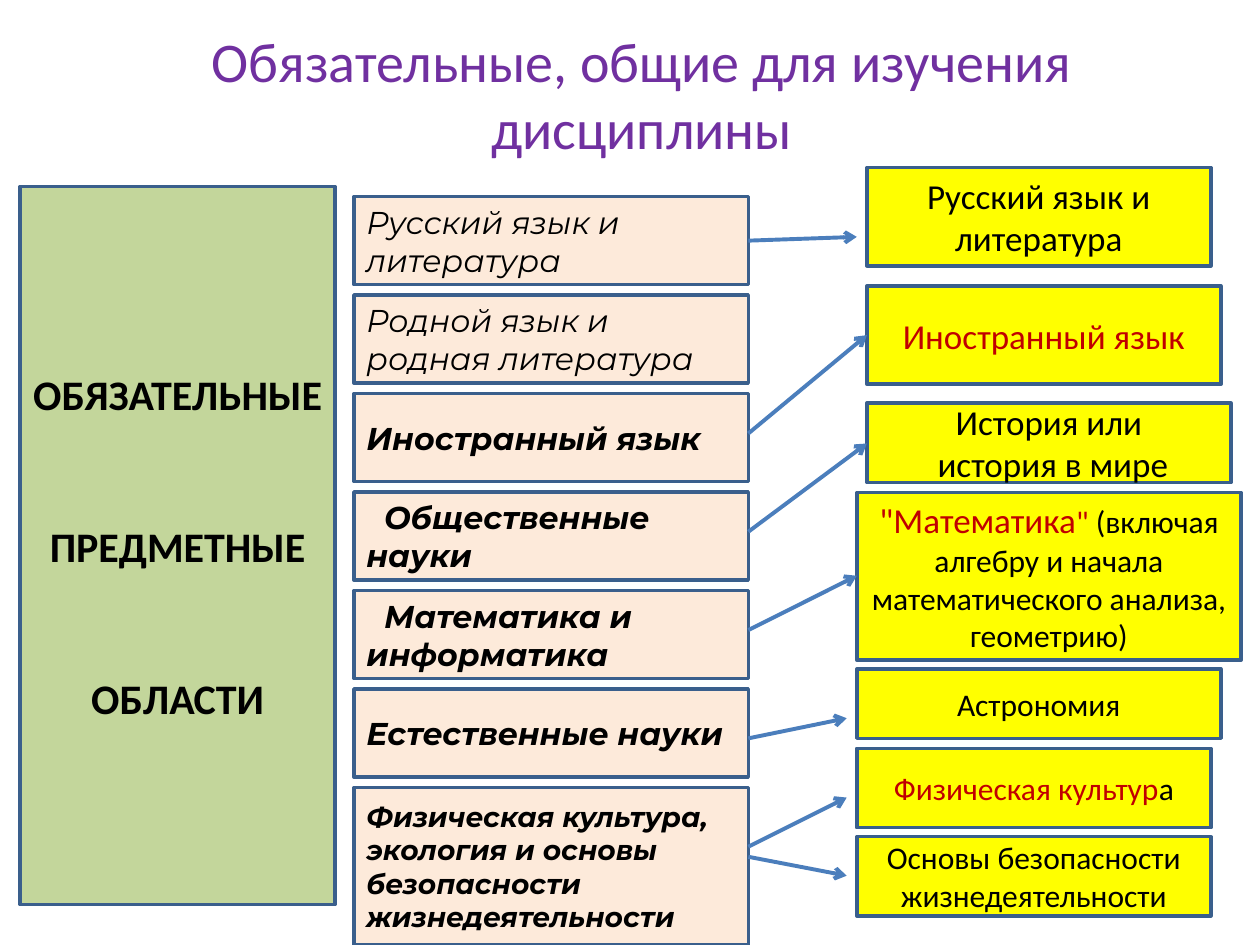
import dataclasses

import pptx
import pptx.dml.color
import pptx.enum.shapes
import pptx.enum.text
import pptx.oxml.ns
import pptx.util
from lxml import etree
from pptx.util import Inches


@dataclasses.dataclass(frozen=True)
class Theme:
    """Hold the colours, fonts and type sizes of the slide."""
    title: str = "7030A0"
    green: str = "C3D69B"
    peach: str = "FDEADA"
    yellow: str = "FFFF00"
    border: str = "3A5F8C"
    arrow: str = "4B7EBC"
    black: str = "000000"
    red: str = "C00000"
    body_font: str = "Calibri"
    area_font: str = "Montserrat"
    title_size: int = 32
    heading_size: int = 24
    large: int = 20
    medium: int = 18
    small: int = 16


THEME = Theme()
AREA_LEFT, AREA_WIDTH, AREA_TOP, LAST_AREA_TOP = 2.81, 3.13, 1.56, 6.25
HEADING = ("ОБЯЗАТЕЛЬНЫЕ", "ПРЕДМЕТНЫЕ", "ОБЛАСТИ")

# Text, bold, first-line indent
AREAS = [
    ("Русский язык и литература", False, 0),
    ("Родной язык и\vродная литература", False, 0),
    ("Иностранный язык", True, 0),
    ("Общественные науки", True, 0.14),
    ("Математика и информатика", True, 0.14),
    ("Естественные науки", True, 0),
    ("Физическая культура, экология и основы безопасности жизнедеятельности", True, 0),
]

# Place, then paragraphs made of (text, size, colour) spans
SUBJECTS = [
    ((6.88, 1.33, 2.73, 0.78), [[("Русский язык и литература", THEME.large, THEME.black)]]),
    ((6.88, 2.27, 2.81, 0.78), [[("Иностранный язык", THEME.large, THEME.red)]]),
    ((6.88, 3.2, 2.89, 0.63), [[("История или", THEME.large, THEME.black)],
                               [(" история в мире", THEME.large, THEME.black)]]),
    ((6.8, 3.91, 3.05, 1.33), [[
        ('"Математика', THEME.large, THEME.red),
        ('" ', THEME.medium, THEME.red),
        ("(включая алгебру и начала математического анализа, геометрию)",
         THEME.medium, THEME.black)]]),
    ((6.8, 5.31, 2.89, 0.55), [[("Астрономия", THEME.medium, THEME.black)]]),
    ((6.8, 5.94, 2.81, 0.63), [[("Физическая культур", THEME.medium, THEME.red),
                                ("а", THEME.medium, THEME.black)]]),
    ((6.8, 6.64, 2.81, 0.63), [[("Основы безопасности жизнедеятельности",
                                 THEME.medium, THEME.black)]]),
]

# Start height, end point
ARROWS = [
    (1.91, 6.8, 1.88),
    (3.44, 6.88, 2.66),
    (4.22, 6.88, 3.52),
    (5, 6.8, 4.57),
    (5.86, 6.72, 5.7),
    (6.72, 6.72, 6.33),
    (6.8, 6.72, 6.95),
]


def rgb(value):
    """Return a colour object for a hexadecimal value."""
    return pptx.dml.color.RGBColor.from_string(value)


def style(font, name, size, colour, bold=False, italic=False):
    """Set every font property used on the slide."""
    font.name, font.size = name, pptx.util.Pt(size)
    font.bold, font.italic = bold, italic
    font.color.rgb = rgb(colour)


def prepare(frame):
    """Wrap the text and centre it vertically."""
    frame.word_wrap = True
    frame.vertical_anchor = pptx.enum.text.MSO_ANCHOR.MIDDLE
    return frame


def add_box(page, place, fill):
    """Add a bordered rectangle and return its text frame."""
    box = page.shapes.add_shape(
        pptx.enum.shapes.MSO_SHAPE.RECTANGLE, *map(Inches, place))
    box.shadow.inherit = False
    box.fill.solid()
    box.fill.fore_color.rgb = rgb(fill)
    box.line.color.rgb = rgb(THEME.border)
    box.line.width = pptx.util.Pt(2)
    return prepare(box.text_frame)


def add_title(page):
    """Add the centred slide title."""
    box = page.shapes.add_textbox(*map(Inches, (0.5, 0.23, 9.19, 1.02)))
    para = prepare(box.text_frame).paragraphs[0]
    para.text = "Обязательные, общие для изучения дисциплины"
    para.alignment = pptx.enum.text.PP_ALIGN.CENTER
    style(para.font, THEME.body_font, THEME.title_size, THEME.title)


def add_heading(page):
    """Add the tall green box with its widely spaced words."""
    frame = add_box(page, (0.16, 1.48, 2.5, 5.7), THEME.green)
    frame.text = "\n".join(HEADING)
    for index, para in enumerate(frame.paragraphs):
        para.alignment = pptx.enum.text.PP_ALIGN.CENTER
        para.space_before = pptx.util.Pt(58 if index else 0)
        style(para.font, THEME.body_font, THEME.heading_size, THEME.black, bold=True)


def add_areas(page):
    """Add the evenly spaced column of subject areas."""
    last = len(AREAS) - 1
    pitch = (LAST_AREA_TOP - AREA_TOP) / last
    for index, (text, bold, indent) in enumerate(AREAS):
        height, size = (1.25, THEME.small) if index == last else (0.7, THEME.medium)
        place = (AREA_LEFT, AREA_TOP + index * pitch, AREA_WIDTH, height)
        para = add_box(page, place, THEME.peach).paragraphs[0]
        para.text = text
        para.alignment = pptx.enum.text.PP_ALIGN.LEFT
        style(para.font, THEME.area_font, size, THEME.black, bold, italic=True)
        para._p.get_or_add_pPr().set("indent", str(Inches(indent)))


def add_subject(page, place, paragraphs):
    """Add a yellow subject box with its coloured spans."""
    frame = add_box(page, place, THEME.yellow)
    for index, spans in enumerate(paragraphs):
        para = frame.add_paragraph() if index else frame.paragraphs[0]
        para.alignment = pptx.enum.text.PP_ALIGN.CENTER
        for text, size, colour in spans:
            span = para.add_run()
            span.text = text
            style(span.font, THEME.body_font, size, colour)


def add_arrow(page, start_y, end_x, end_y):
    """Add an arrow from the column of areas to a subject."""
    start_x = AREA_LEFT + AREA_WIDTH
    arrow = page.shapes.add_connector(
        pptx.enum.shapes.MSO_CONNECTOR.STRAIGHT,
        *map(Inches, (start_x, start_y, end_x, end_y)))
    arrow.line.color.rgb = rgb(THEME.arrow)
    arrow.line.width = pptx.util.Pt(2.25)
    qn = pptx.oxml.ns.qn
    etree.SubElement(arrow.line._get_or_add_ln(), qn("a:tailEnd"), type="arrow")
    etree.SubElement(arrow._element.spPr, qn("a:effectLst"))


def main():
    """Build and save the slide."""
    deck = pptx.Presentation()
    deck.slide_width, deck.slide_height = Inches(10), Inches(7.5)
    page = deck.slides.add_slide(deck.slide_layouts[6])
    add_title(page)
    add_heading(page)
    add_areas(page)
    for place, paragraphs in SUBJECTS:
        add_subject(page, place, paragraphs)
    for arrow in ARROWS:
        add_arrow(page, *arrow)
    deck.save("out.pptx")


if __name__ == "__main__":
    main()
